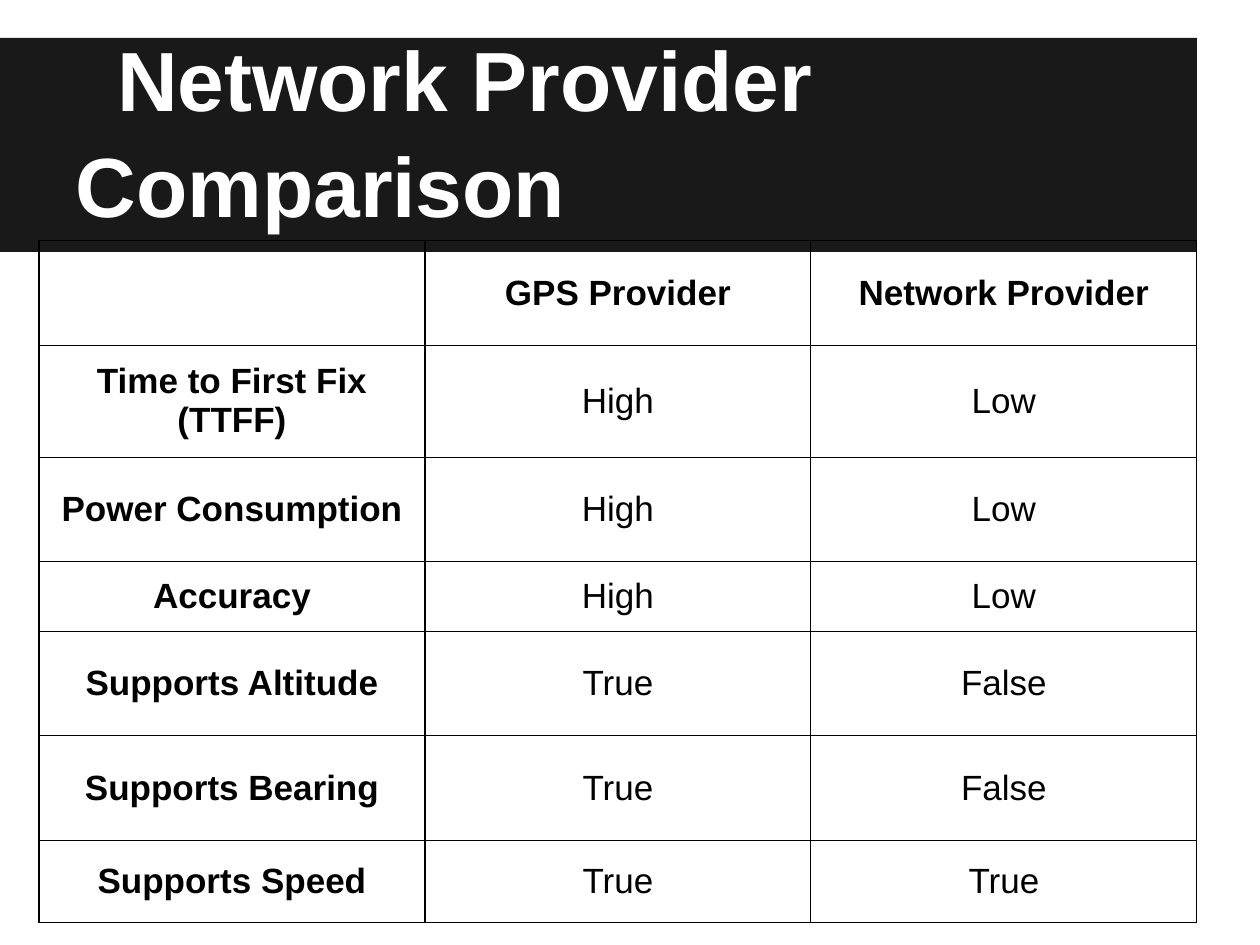
from lxml import etree
from pptx import Presentation
from pptx import util as u
from pptx.dml.color import RGBColor
from pptx.enum import shapes, text
from pptx.oxml.ns import qn

# Content
TITLE = "Network Provider Comparison"
ROWS = [
    # height, label, GPS, network
    (0.83, "", "GPS Provider", "Network Provider"),
    (0.89, "Time to First Fix (TTFF)", "High", "Low"),
    (0.83, "Power Consumption", "High", "Low"),
    (0.55, "Accuracy", "High", "Low"),
    (0.83, "Supports Altitude", "True", "False"),
    (0.83, "Supports Bearing", "True", "False"),
    (0.65, "Supports Speed", "True", "True"),
]

# Format
WIDE, HIGH = 10, 7.5
RIGHT = 0.95 * WIDE
LEFT, TOP, BAND_TOP = 0.31, 1.91, 0.3
PAD = u.Inches(0.1)
DARK = RGBColor(0x19, 0x19, 0x19)
WHITE = RGBColor(0xFF, 0xFF, 0xFF)
BLACK = RGBColor(0, 0, 0)
SIDES = ("left", "top", "right", "bottom")


def style(par, color, **form):
    """Set the font of a paragraph's only run."""
    font = par.runs[0].font
    for key, val in dict(name="Arial", **form).items():
        setattr(font, key, val)
    font.color.rgb = color


def pad(box):
    for side in SIDES:
        setattr(box, f"margin_{side}", PAD)


def border(cell):
    """Draw a thin black line on all four sides of a cell."""
    props = cell._tc.get_or_add_tcPr()
    for i, tag in enumerate(("a:lnL", "a:lnR", "a:lnT", "a:lnB")):
        line = etree.Element(qn(tag), w=str(u.Pt(0.75)))
        fill = etree.SubElement(line, qn("a:solidFill"))
        etree.SubElement(fill, qn("a:srgbClr"), val=str(BLACK))
        props.insert(i, line)


def main():
    prs = Presentation()
    prs.slide_width, prs.slide_height = u.Inches(WIDE), u.Inches(HIGH)
    slide = prs.slides.add_slide(prs.slide_layouts[5])

    # Dark band behind the title
    band = slide.shapes.add_shape(
        shapes.MSO_SHAPE.RECTANGLE, 0, u.Inches(BAND_TOP),
        u.Inches(RIGHT), u.Inches(1.7))
    band.shadow.inherit = False
    band.fill.solid()
    band.fill.fore_color.rgb = DARK
    band.line.fill.background()

    # Title
    title = slide.shapes.title
    band._element.addnext(title._element)
    place = dict(left=0.5, top=BAND_TOP, width=9, height=1.66)
    for key, val in place.items():
        setattr(title, key, u.Inches(val))
    frame = title.text_frame
    frame.text = TITLE
    frame.word_wrap = True
    frame.auto_size = text.MSO_AUTO_SIZE.NONE
    frame.vertical_anchor = text.MSO_ANCHOR.BOTTOM
    pad(frame)
    par = frame.paragraphs[0]
    par.alignment = text.PP_ALIGN.LEFT
    par.line_spacing = 1.05
    par._p.get_or_add_pPr().set("indent", str(u.Inches(0.33)))
    style(par, WHITE, size=u.Pt(48), bold=True)

    # Comparison table
    cols = len(ROWS[0]) - 1
    width = RIGHT - LEFT
    table = slide.shapes.add_table(
        len(ROWS), cols, u.Inches(LEFT), u.Inches(TOP), u.Inches(width),
        u.Inches(sum(row[0] for row in ROWS))).table
    for col in table.columns:
        col.width = u.Inches(width / cols)
    for r, (high, *words) in enumerate(ROWS):
        table.rows[r].height = u.Inches(high)
        for c, word in enumerate(words):
            cell = table.cell(r, c)
            cell.fill.background()
            border(cell)
            pad(cell)
            cell.vertical_anchor = text.MSO_ANCHOR.MIDDLE
            if word:
                cell.text = word
                par = cell.text_frame.paragraphs[0]
                par.alignment = text.PP_ALIGN.CENTER
                style(par, BLACK, size=u.Pt(20), bold=r == 0 or c == 0)

    prs.save("out.pptx")


if __name__ == "__main__":
    main()
